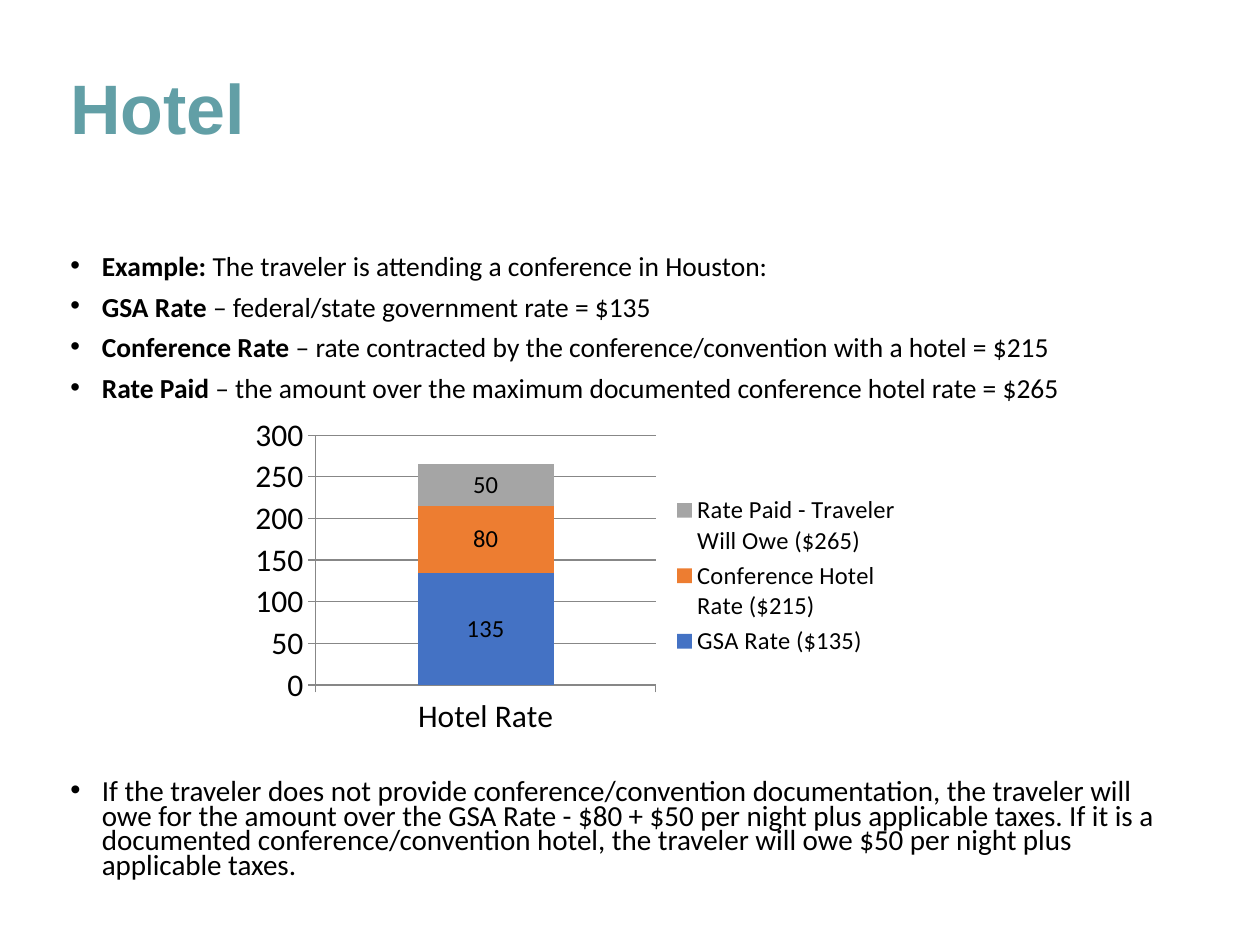
from lxml import etree
from pptx import Presentation
from pptx.chart.data import CategoryChartData
from pptx.dml.color import RGBColor
from pptx.enum.chart import XL_CHART_TYPE, XL_LABEL_POSITION, XL_LEGEND_POSITION, XL_TICK_MARK
from pptx.enum.text import MSO_ANCHOR
from pptx.oxml.ns import qn
from pptx.util import Inches, Pt

STACKED = XL_CHART_TYPE.COLUMN_STACKED
CENTER = XL_LABEL_POSITION.CENTER
RIGHT = XL_LEGEND_POSITION.RIGHT
OUTSIDE = XL_TICK_MARK.OUTSIDE
MIDDLE = MSO_ANCHOR.MIDDLE

TEAL = RGBColor(0x62, 0x9F, 0xA6)
BLACK = RGBColor(0, 0, 0)
GRAY = RGBColor(0x87, 0x87, 0x87)
BLUE = RGBColor(0x44, 0x72, 0xC4)
ORANGE = RGBColor(0xED, 0x7D, 0x31)
SILVER = RGBColor(0xA5, 0xA5, 0xA5)

TITLE = "Hotel"
RATES = [
    ("Example: ", "The traveler is attending a conference in Houston:"),
    ("GSA Rate ", "– federal/state government rate = $135"),
    ("Conference Rate", " – rate contracted by the conference/convention with a hotel = $215"),
    ("Rate Paid", " – the amount over the maximum documented conference hotel rate = $265"),
]
CONCLUSION = [
    ("", "If the traveler does not provide conference/convention documentation, the traveler "
         "will owe for the amount over the GSA Rate - $80 + $50 per night plus applicable taxes. "
         "If it is a documented conference/convention hotel, the traveler will owe $50 per night "
         "plus applicable taxes."),
]
CATEGORIES = ["Hotel Rate"]
SERIES = [
    ("GSA Rate ($135)", 135, BLUE),
    ("Conference Hotel Rate ($215)", 80, ORANGE),
    ("Rate Paid - Traveler Will Owe ($265)", 50, SILVER),
]
LEFT, WIDTH = 0.46, 8.85


def style(font, size, color=BLACK, name="Calibri"):
    font.size = Pt(size)
    font.name = name
    font.color.rgb = color


def add_frame(page, top, height):
    box = page.shapes.add_textbox(Inches(LEFT), Inches(top), Inches(WIDTH), Inches(height))
    box.text_frame.word_wrap = True
    return box.text_frame


def add_bullets(page, top, height, items, size):
    frame = add_frame(page, top, height)
    for index, (lead, rest) in enumerate(items):
        para = frame.paragraphs[0] if index == 0 else frame.add_paragraph()
        para.line_spacing = 0.7
        if index:
            para.space_before = Pt(10)
        props = para._p.get_or_add_pPr()
        props.set("marL", str(Inches(0.25)))
        props.set("indent", str(-Inches(0.25)))
        etree.SubElement(props, qn("a:buFont")).set("typeface", "Arial")
        etree.SubElement(props, qn("a:buChar")).set("char", "•")
        style(para.font, size)
        for text, bold in ((lead, True), (rest, False)):
            if text:
                span = para.add_run()
                span.text = text
                span.font.bold = bold


def add_rate_chart(page):
    data = CategoryChartData()
    data.categories = CATEGORIES
    for name, value, _ in SERIES:
        data.add_series(name, [value])
    chart = page.shapes.add_chart(
        STACKED, Inches(1.92), Inches(3.25), Inches(5.33), Inches(2.64), data).chart
    style(chart.font, 18)
    chart.has_title = False
    chart.has_legend = True
    chart.legend.position = RIGHT
    chart.legend.include_in_layout = False
    style(chart.legend.font, 14)
    for axis in (chart.category_axis, chart.value_axis):
        axis.major_tick_mark = OUTSIDE
        axis.format.line.color.rgb = GRAY
    chart.value_axis.has_major_gridlines = True
    chart.value_axis.major_gridlines.format.line.color.rgb = GRAY
    plot = chart.plots[0]
    plot.gap_width = 150
    plot.overlap = 100
    plot.vary_by_categories = False
    for series, (_, _, color) in zip(plot.series, SERIES):
        series.format.fill.solid()
        series.format.fill.fore_color.rgb = color
        labels = series.data_labels
        labels.show_value = True
        labels.position = CENTER
        style(labels.font, 14)


def main():
    deck = Presentation()
    deck.slide_width, deck.slide_height = Inches(10), Inches(7.5)
    page = deck.slides.add_slide(deck.slide_layouts[6])

    heading = add_frame(page, 0.4, 0.98)
    heading.vertical_anchor = MIDDLE
    para = heading.paragraphs[0]
    para.text = TITLE
    para.line_spacing = 0.9
    style(para.font, 40, TEAL, "Arial")
    para.font.bold = True

    add_bullets(page, 2, 1.25, RATES, 15.7)
    add_rate_chart(page)
    add_bullets(page, 6.16, 1, CONCLUSION, 16.6)
    deck.save("out.pptx")


if __name__ == "__main__":
    main()
